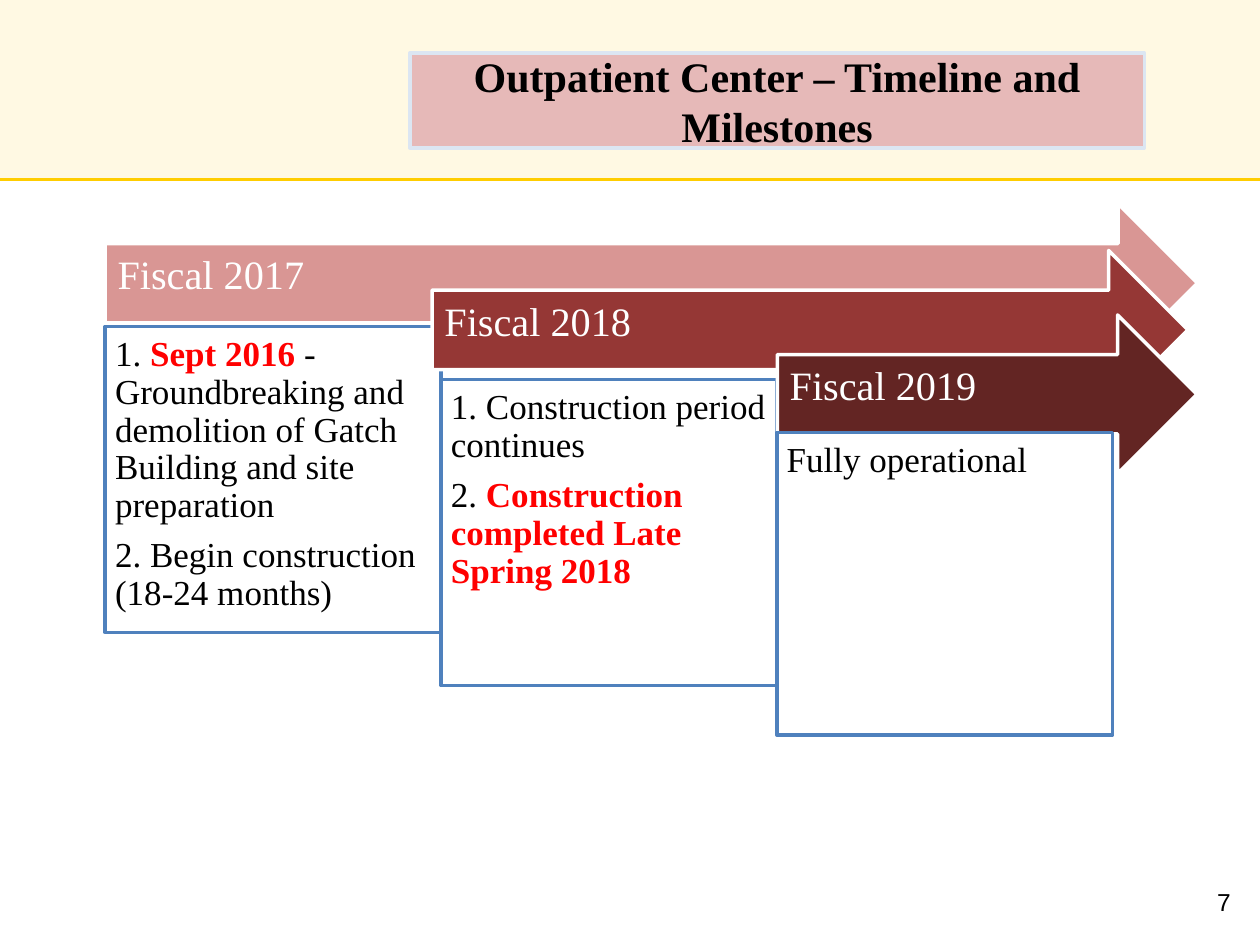
from dataclasses import dataclass

import pptx
import pptx.dml.color
import pptx.enum.shapes
import pptx.enum.text
import pptx.oxml.ns
import pptx.util
from lxml import etree

Cm = pptx.util.Cm
Pt = pptx.util.Pt
Shape = pptx.enum.shapes.MSO_SHAPE
Align = pptx.enum.text.PP_ALIGN
Anchor = pptx.enum.text.MSO_ANCHOR


@dataclass(frozen=True)
class Theme:
    serif: str = "Times New Roman"
    sans: str = "Arial"
    gold: str = "FFCD00"
    white: str = "FFFFFF"
    black: str = "000000"
    red: str = "FF0000"
    blue: str = "4F81BD"
    title_fill: str = "E6B9B8"
    title_line: str = "DCE6F2"
    title_size: int = 24
    arrow_size: int = 23
    body_size: int = 20
    number_size: int = 14


THEME = Theme()

SLIDE_WIDTH, SLIDE_HEIGHT, BAND_HEIGHT = 25.4, 19.05, 3.61
BOX_LEFT, BOX_TOP, BOX_WIDTH = 2.12, 6.58, 6.77
BOX_STEP_DOWN = 1.07
ARROW_HEIGHT = 3.2

# Each text is a list of paragraphs, each paragraph a list of (words, highlighted).
YEARS = [
    {"label": "Fiscal 2017", "fill": "D99694", "arrow": (2.12, 4.11, 22.02), "box_height": 6.17,
     "text": [[("1. ", False), ("Sept 2016 ", True),
               ("- Groundbreaking and demolition of Gatch Building and site preparation", False)],
              [("2. Begin construction (18-24 months)", False)]]},
    {"label": "Fiscal 2018", "fill": "953735", "arrow": (8.71, 5.05, 15.24), "box_height": 6.17,
     "text": [[("1. Construction period continues", False)],
              [("2. ", False), ("Construction completed Late Spring 2018", True)]]},
    {"label": "Fiscal 2019", "fill": "632523", "arrow": (15.67, 6.35, 8.46), "box_height": 6.1,
     "text": [[("Fully operational", False)]]},
]


def apply(target, values):
    for name, value in values.items():
        setattr(target, name, value)


def color(code):
    return pptx.dml.color.RGBColor.from_string(code)


def paint(shape, fill, line=None):
    shape.fill.solid()
    shape.fill.fore_color.rgb = color(fill)
    if line:
        shape.line.color.rgb = color(line)
        shape.line.width = Pt(2)
    else:
        shape.line.fill.background()


def add_block(page, kind, place, fill, line=None):
    block = page.shapes.add_shape(kind, *(Cm(length) for length in place))
    block.shadow.inherit = False
    paint(block, fill, line)
    return block


def set_frame(shape, anchor, insets):
    """Insets run left, top, right, bottom, in centimetres."""
    frame = shape.text_frame
    names = ("margin_left", "margin_top", "margin_right", "margin_bottom")
    apply(frame, {"word_wrap": True, "auto_size": pptx.enum.text.MSO_AUTO_SIZE.NONE,
                  "vertical_anchor": anchor})
    apply(frame, {name: Cm(inset) for name, inset in zip(names, insets)})
    return frame


def add_span(para, words, font, code):
    span = para.add_run()
    span.text = words
    apply(span.font, font)
    span.font.color.rgb = color(code)


def add_band(page):
    band = add_block(page, Shape.RECTANGLE, (0, 0, SLIDE_WIDTH, BAND_HEIGHT), THEME.gold)
    tint = band.fill._xPr.find(".//" + pptx.oxml.ns.qn("a:srgbClr"))
    etree.SubElement(tint, pptx.oxml.ns.qn("a:alpha"), val="11000")
    rule = page.shapes.add_connector(
        pptx.enum.shapes.MSO_CONNECTOR.STRAIGHT,
        Cm(0), Cm(BAND_HEIGHT), Cm(SLIDE_WIDTH), Cm(BAND_HEIGHT))
    rule.line.color.rgb = color(THEME.gold)
    rule.line.width = Pt(1.75)
    etree.SubElement(rule._element.spPr, pptx.oxml.ns.qn("a:effectLst"))


def add_arrow(page, year):
    arrow = add_block(page, Shape.RIGHT_ARROW, (*year["arrow"], ARROW_HEIGHT),
                      year["fill"], THEME.white)
    para = set_frame(arrow, Anchor.MIDDLE, (0.25, 0.25, 0.71, 0.51)).paragraphs[0]
    apply(para, {"alignment": Align.LEFT, "line_spacing": 0.9})
    add_span(para, year["label"], {"name": THEME.serif, "size": Pt(THEME.arrow_size)},
             THEME.white)


def add_milestones(page, index, year):
    place = (BOX_LEFT + index * BOX_WIDTH, BOX_TOP + index * BOX_STEP_DOWN,
             BOX_WIDTH, year["box_height"])
    box = add_block(page, Shape.RECTANGLE, place, THEME.white, THEME.blue)
    frame = set_frame(box, Anchor.TOP, (0.2, 0.2, 0.2, 0.2))
    for number, spans in enumerate(year["text"]):
        para = frame.add_paragraph() if number else frame.paragraphs[0]
        apply(para, {"alignment": Align.LEFT, "line_spacing": 0.9, "space_after": Pt(7)})
        for words, highlighted in spans:
            font = {"name": THEME.serif, "size": Pt(THEME.body_size), "bold": highlighted}
            add_span(para, words, font, THEME.red if highlighted else THEME.black)


def add_title(page):
    """Format the title placeholder and bring it in front of the band."""
    title = page.shapes.title
    apply(title, {"left": Cm(8.26), "top": Cm(1.07), "width": Cm(14.81), "height": Cm(1.91)})
    paint(title, THEME.title_fill, THEME.title_line)
    para = set_frame(title, Anchor.MIDDLE, (0.25, 0.13, 0.25, 0.13)).paragraphs[0]
    para.alignment = Align.CENTER
    add_span(para, "Outpatient Center – Timeline and Milestones",
             {"name": THEME.serif, "size": Pt(THEME.title_size), "bold": True}, THEME.black)
    page.shapes._spTree.append(title._element)


def add_page_number(page):
    box = page.shapes.add_textbox(Cm(19.13), Cm(17.75), Cm(5.93), Cm(1.02))
    para = set_frame(box, Anchor.TOP, (0.25, 0.13, 0.25, 0.13)).paragraphs[0]
    para.alignment = Align.RIGHT
    add_span(para, "7", {"name": THEME.sans, "size": Pt(THEME.number_size)}, THEME.black)


def main():
    deck = pptx.Presentation()
    apply(deck, {"slide_width": Cm(SLIDE_WIDTH), "slide_height": Cm(SLIDE_HEIGHT)})
    page = deck.slides.add_slide(deck.slide_layouts.get_by_name("Title Only"))
    add_band(page)
    for index, year in enumerate(YEARS):
        add_arrow(page, year)
        add_milestones(page, index, year)
    add_title(page)
    add_page_number(page)
    deck.save("out.pptx")


if __name__ == "__main__":
    main()
